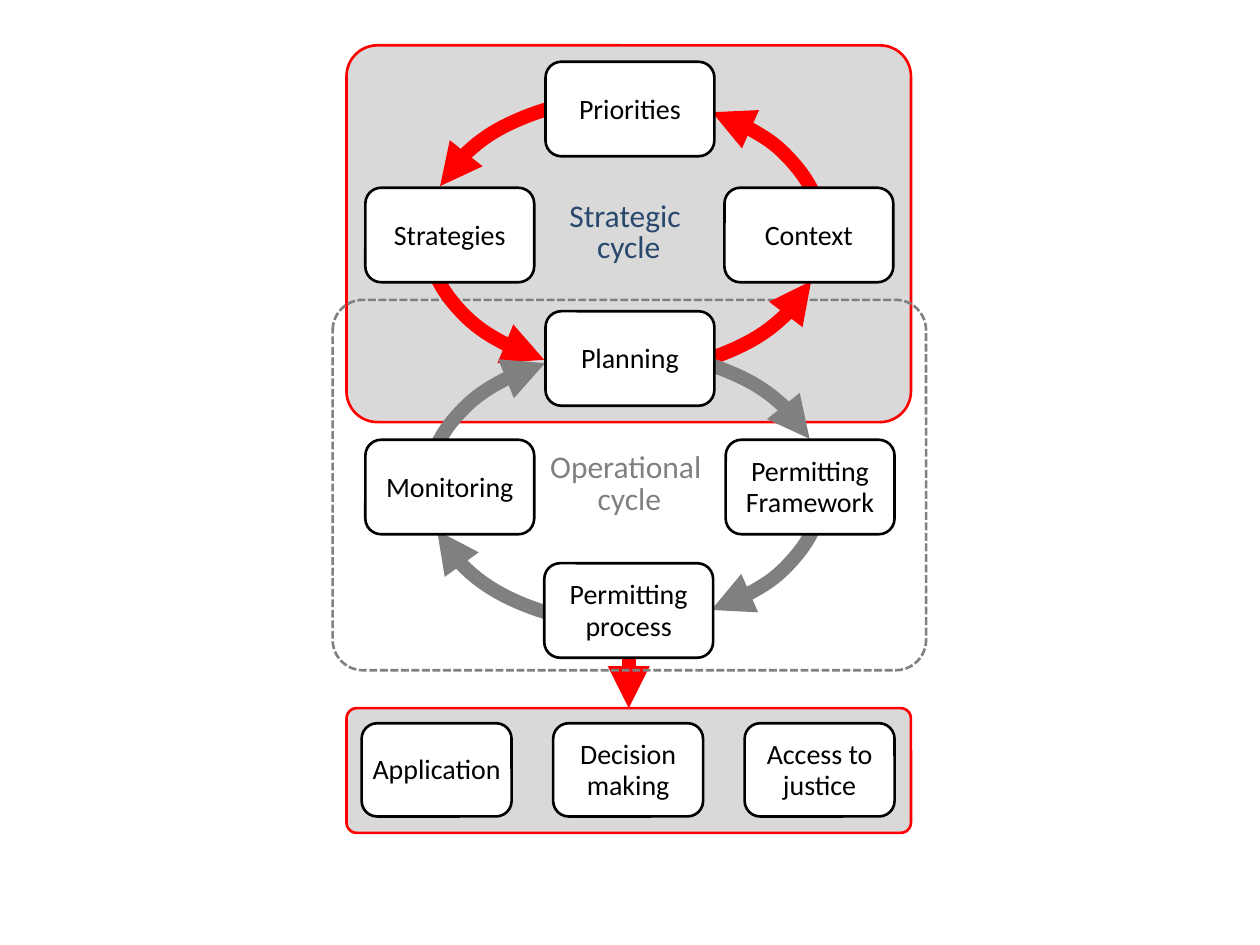
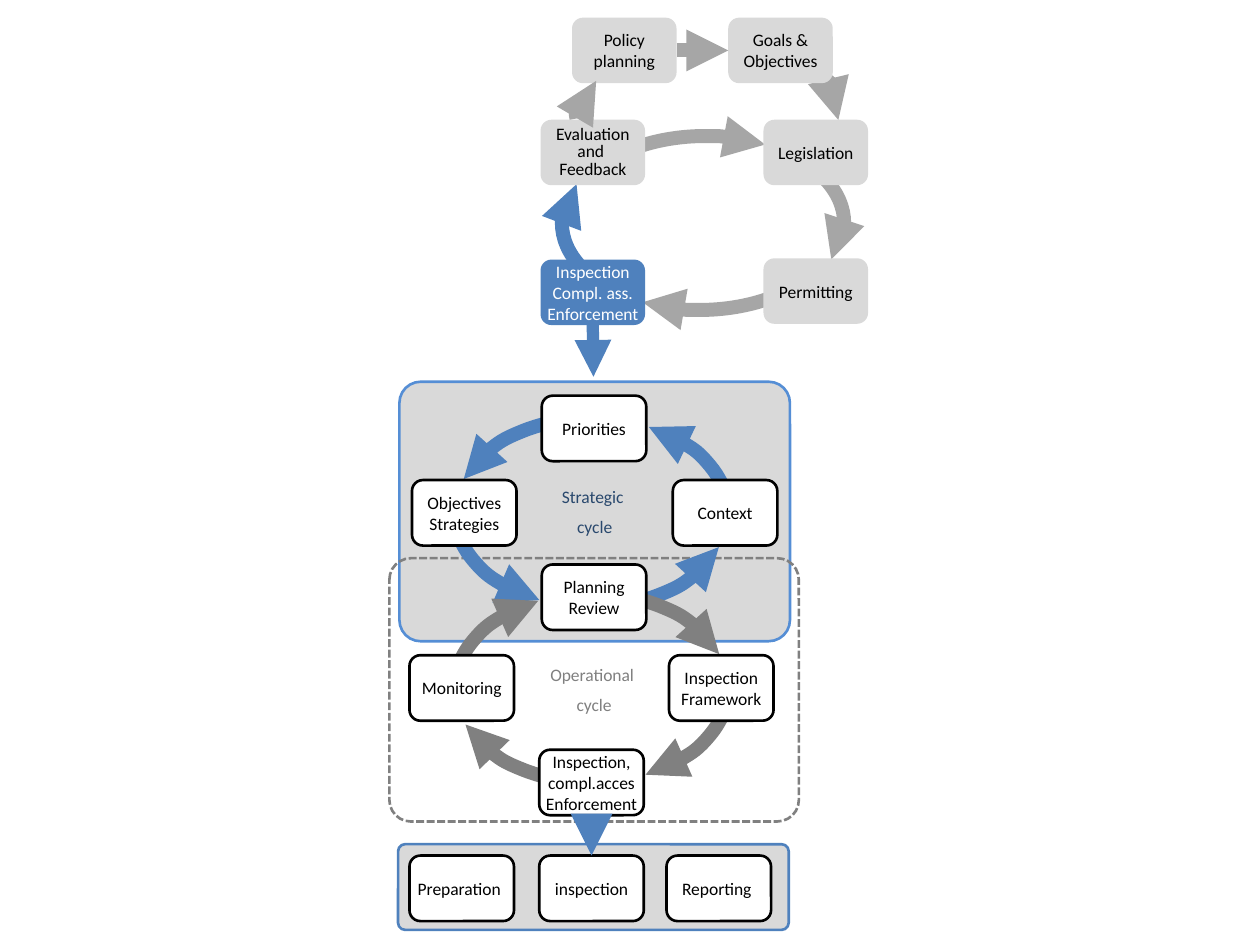
from lxml.etree import SubElement
from pptx import Presentation
from pptx.dml.color import RGBColor
from pptx.enum.dml import MSO_LINE
from pptx.enum.shapes import MSO_CONNECTOR, MSO_SHAPE
from pptx.enum.text import MSO_ANCHOR, PP_ALIGN
from pptx.oxml.ns import qn
from pptx.util import Inches, Pt

COLORS = {
    "red": "FF0000", "blue": "4F81BD", "sky": "558ED5", "navy": "29486D",
    "grey": "808080", "mid": "A6A6A6", "pale": "D9D9D9",
    "black": "000000", "white": "FFFFFF",
}
FONT = "Calibri"
COLS, ROWS = 100, 75
TOP, BOTTOM, LEFT, RIGHT = 0, 2, 1, 3   # connection sites of a rectangle
CENTER = PP_ALIGN.CENTER


def rgb(name):
    return RGBColor.from_string(COLORS[name])


class Deck:
    """Shared style plus the slide being drawn; lengths are grid columns and rows."""

    def __init__(self):
        self.prs = Presentation()
        self.prs.slide_width, self.prs.slide_height = Inches(10), Inches(7.5)

    def new_slide(self, box_size, size, spacing, before=0):
        self.shapes = self.prs.slides.add_slide(self.prs.slide_layouts[6]).shapes
        self.box_size, self.size = box_size, size
        self.spacing, self.before = spacing, before

    def x(self, cols):
        return round(self.prs.slide_width * cols / COLS)

    def y(self, rows):
        return round(self.prs.slide_height * rows / ROWS)

    def shape(self, kind, at, fill=None, line=None, weight=1.5):
        col, row, width, height = at
        sp = self.shapes.add_shape(kind, self.x(col), self.y(row),
                                   self.x(width), self.y(height))
        sp.shadow.inherit = False
        if fill:
            sp.fill.solid()
            sp.fill.fore_color.rgb = rgb(fill)
        else:
            sp.fill.background()
        if line:
            self.stroke(sp, line, weight)
        else:
            sp.line.fill.background()
        return sp

    def stroke(self, sp, color, weight):
        sp.line.color.rgb = rgb(color)
        sp.line.width = Pt(weight)

    def arrowhead(self, sp, end):
        SubElement(sp.element.spPr.find(qn("a:ln")), qn(f"a:{end}End"), type="triangle")

    def label(self, sp, text, color, size, spacing, before, align=CENTER, pad=0):
        tf = sp.text_frame
        tf.word_wrap = True
        tf.vertical_anchor = MSO_ANCHOR.MIDDLE
        tf.margin_left = tf.margin_right = self.x(pad)
        tf.margin_top = tf.margin_bottom = 0
        tf.text = text
        for p in tf.paragraphs:
            p.alignment = align
            p.line_spacing, p.space_before = Pt(spacing), Pt(before)
            for r in p.runs:
                r.font.name, r.font.size = FONT, Pt(size)
                r.font.color.rgb = rgb(color)

    def panel(self, at, line, fill=None, text=None, color=None, size=None):
        sp = self.shape(MSO_SHAPE.ROUNDED_RECTANGLE, at, fill, line)
        sp.adjustments[0] = 0.082
        if not fill:
            sp.line.dash_style = MSO_LINE.SQUARE_DOT
        if text:
            self.label(sp, text, color, size, self.spacing, self.before)
        return sp

    def box(self, text, col, row, fill="white", line="black", color="black",
            spacing=None, before=None, **layout):
        sp = self.shape(MSO_SHAPE.ROUNDED_RECTANGLE, (col, row, *self.box_size), fill, line)
        self.label(sp, text, color, self.size, spacing or self.spacing,
                   self.before if before is None else before, **layout)
        return sp

    def arc(self, at, start, stop, color, end="tail"):
        sp = self.shape(MSO_SHAPE.ARC, at, line=color, weight=8)
        # Arc angles are stored in 60000ths of a degree, adjustments in 100000ths
        sp.adjustments[0], sp.adjustments[1] = start * 0.6, stop * 0.6
        self.arrowhead(sp, end)

    def ring(self, at, spans, color, end="tail"):
        for start, stop in spans:
            self.arc(at, start, stop, color, end)

    def arrow(self, start, stop, color, weight=8):
        cx = self.shapes.add_connector(MSO_CONNECTOR.STRAIGHT, self.x(start[0]),
                                       self.y(start[1]), self.x(stop[0]), self.y(stop[1]))
        self.stroke(cx, color, weight)
        self.arrowhead(cx, "tail")
        SubElement(cx.element.spPr, qn("a:effectLst"))
        return cx

    def join(self, cx, first=None, last=None):
        if first:
            cx.begin_connect(*first)
        if last:
            cx.end_connect(*last)


def permitting_cycles(d):
    d.new_slide(box_size=(13.4, 7.5), size=16, spacing=18)
    down = d.arrow((49.9, 52.2), (49.9, 56.2), "red")

    # Panels
    steps = d.panel((27.5, 56.2, 44.8, 9.9), "red", "pale")
    d.panel((27.5, 3.6, 44.8, 29.9), "red", "pale", "Strategic \ncycle", "navy", 18)
    d.panel((26.4, 23.8, 47.1, 29.4), "grey", None, "Operational \ncycle", "grey", 18)

    # Circular arrows
    d.ring((33.9, 7.8, 31.4, 21.7),
           [(305.4, 347.2), (13.9, 61.1), (122.9, 170.1), (194.8, 244.7)], "red", "head")
    d.ring((33.9, 27.9, 31.4, 21.6),
           [(298.2, 345.2), (9.7, 54.8), (117.2, 167.1), (191.7, 237.3)], "grey")

    # Cycle stages
    for text, col, row in [
        ("Priorities", 43.3, 4.9), ("Strategies", 29, 14.9), ("Context", 57.5, 14.9),
        ("Monitoring", 29, 34.9), ("Permitting Framework", 57.6, 34.9),
        ("Planning", 43.3, 24.7),
    ]:
        d.box(text, col, row)
    process = d.box("Permitting process", 43.2, 44.7)
    d.join(down, (process, BOTTOM), (steps, TOP))

    # Steps of the permitting process
    d.box_size = (11.9, 7.4)
    for i, text in enumerate(["Application", "Decision making", "Access to justice"]):
        d.box(text, 28.7 + 15.2 * i, 57.4)


def inspection_cycles(d):
    d.new_slide(box_size=(8.3, 5.2), size=10, spacing=12, before=5)
    down = d.arrow((47.1, 25.8), (47.1, 29.9), "blue", 7)

    # Panels
    d.panel((31.6, 67, 31, 6.8), "blue", "pale")
    d.panel((31.7, 30.3, 31, 20.6), "sky", "pale", "Strategic \ncycle", "navy", 10)
    d.panel((30.9, 44.3, 32.5, 20.9), "grey", None, "Operational \ncycle", "grey", 10)

    # Circular arrows
    d.ring((36.1, 33.2, 21.7, 15),
           [(303.8, 347.2), (15.1, 61.1), (120.8, 170.1), (194.8, 244.7)], "blue", "head")
    d.ring((36.1, 47.1, 21.7, 15),
           [(298.2, 345.2), (9.7, 58.1), (117.2, 163.8), (191.7, 238.5)], "grey")

    # Cycle stages
    for text, col, row, before in [
        ("Priorities", 43, 31.4, 5), ("Objectives Strategies", 32.7, 38.1, 0),
        ("Context", 53.4, 38.1, 5), ("Monitoring", 32.5, 52, 5),
        ("Inspection Framework", 53.1, 52, 5), ("Planning\nReview", 43, 44.8, 0),
    ]:
        d.box(text, col, row, before=before)
    enforcement = d.box("Inspection, compl.acces Enforcement", 42.8, 59.5)

    # Steps of the inspection
    d.box("Reporting", 52.9, 67.9, align=PP_ALIGN.LEFT, pad=1)
    inspection = d.box("inspection", 42.8, 67.9)
    d.box("Preparation", 32.5, 67.9, align=PP_ALIGN.LEFT, pad=0.4)
    d.join(d.arrow((46.9, 64.7), (46.9, 67.9), "blue"),
           (enforcement, BOTTOM), (inspection, TOP))

    # Regulatory cycle: arrows
    right_loop, upper_loop = (44.9, 10.8, 22.1, 13.8), (45, 3.8, 21.8, 9.4)
    d.arc(right_loop, 339.9, 16.1, "mid")
    d.arc((44.5, 10.8, 22.1, 13.8), 18.9, 125.8, "mid")
    d.arc((44.6, 10.8, 22.1, 13.8), 157.5, 197.3, "blue")
    d.arc(upper_loop, 316.9, 5.5, "mid")
    d.arc(right_loop, 205.8, 307.5, "mid")

    # Regulatory cycle: stages
    plain = {"fill": "pale", "line": None}
    goals = d.box("Goals &\nObjectives", 57.8, 1.4, before=0, **plain)
    policy = d.box("Policy planning", 45.4, 1.4, **plain)
    d.box("Permitting", 60.6, 20.5, **plain)
    d.box("Legislation", 60.6, 9.5, **plain)
    d.box("Evaluation\nand \nFeedback", 42.9, 9.5, spacing=10, before=0, **plain)
    current = d.box("Inspection Compl. ass.\nEnforcement", 42.9, 20.6, fill="blue",
                    line=None, color="white", before=0)
    d.join(down, (current, BOTTOM))
    d.join(d.arrow((53.7, 4), (57.8, 4), "mid"), (policy, RIGHT), (goals, LEFT))
    d.arc((45.7, 4.2, 21.6, 9.4), 177.3, 195.1, "mid")


def main():
    d = Deck()
    permitting_cycles(d)
    inspection_cycles(d)
    d.prs.save("out.pptx")


if __name__ == "__main__":
    main()
